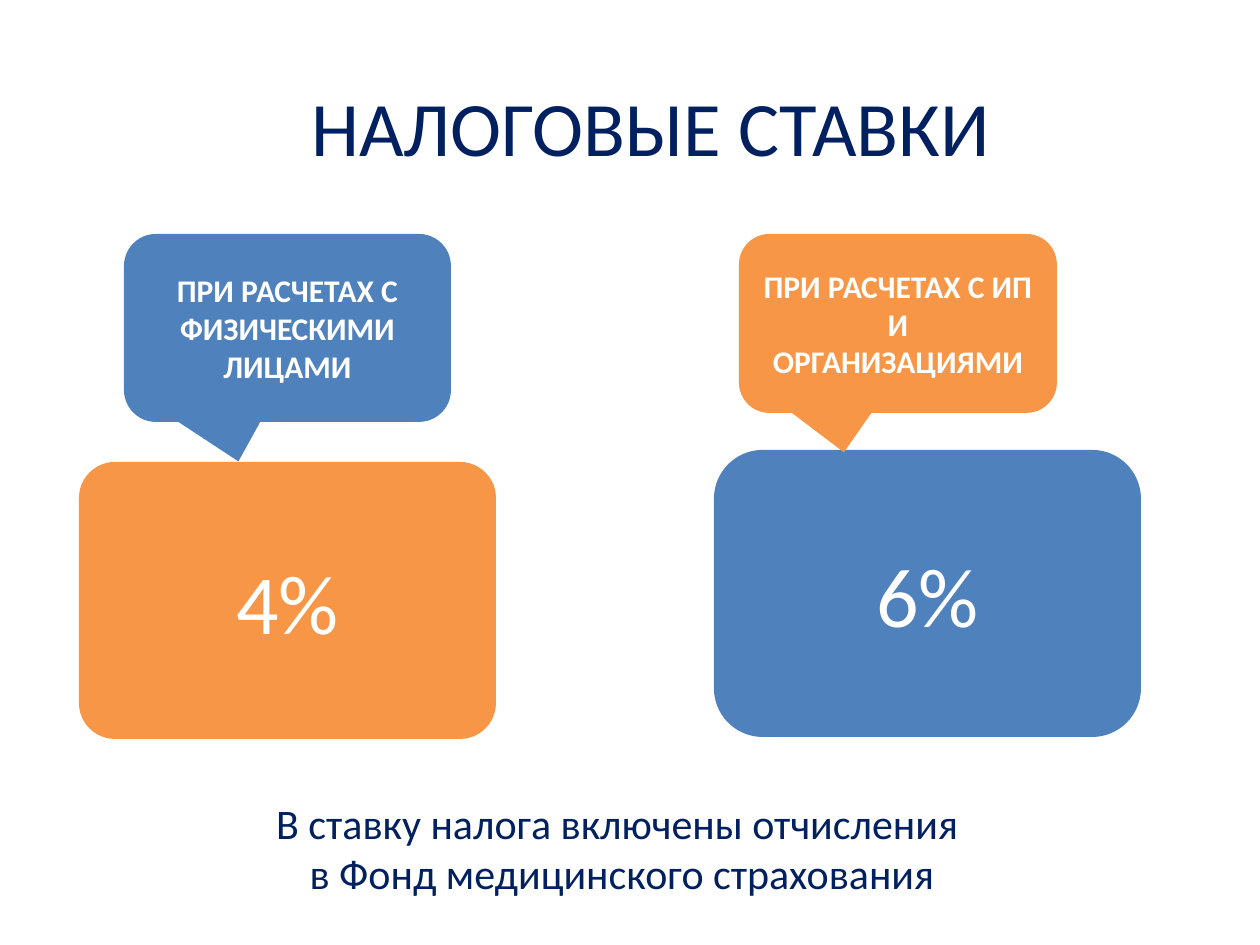
import pptx
import pptx.util
import pptx.dml.color
import pptx.enum.shapes
import pptx.enum.text

PX = 914400 / 126
NAVY, BLUE, ORANGE, WHITE = "002060", "4F81BD", "F79646", "FFFFFF"
SHAPES = pptx.enum.shapes.MSO_SHAPE
MIDDLE = pptx.enum.text.MSO_ANCHOR.MIDDLE
TOP = pptx.enum.text.MSO_ANCHOR.TOP


def emu(*lengths):
    return [pptx.util.Emu(round(length * PX)) for length in lengths]


def color(hex_code):
    return pptx.dml.color.RGBColor.from_string(hex_code)


def write(frame, lines, size, ink, bold=False, anchor=MIDDLE):
    frame.word_wrap = True
    frame.vertical_anchor = anchor
    font_format = {"name": "Calibri", "size": pptx.util.Pt(size), "bold": bold}
    for index, line in enumerate(lines):
        paragraph = frame.add_paragraph() if index else frame.paragraphs[0]
        paragraph.alignment = pptx.enum.text.PP_ALIGN.CENTER
        run = paragraph.add_run()
        run.text = line
        for name, value in font_format.items():
            setattr(run.font, name, value)
        run.font.color.rgb = color(ink)


def add_words(slide, box, lines, size, anchor):
    words = slide.shapes.add_textbox(*emu(*box))
    write(words.text_frame, lines, size, NAVY, anchor=anchor)


def add_panel(slide, kind, box, adjustments, fill, text, size, bold=False):
    panel = slide.shapes.add_shape(kind, *emu(*box))
    for index, value in enumerate(adjustments):
        panel.adjustments[index] = value
    panel.shadow.inherit = False
    panel.fill.solid()
    panel.fill.fore_color.rgb = color(fill)
    panel.line.fill.background()
    write(panel.text_frame, [text], size, WHITE, bold)


def add_tax_rate(slide, box, rate, rate_height, corner, rate_fill,
                 payer, payer_box, tip, payer_fill):
    left, top, width, height = box
    # Rate fills the bottom of the box
    rate_box = (left, top + height - rate_height, width, rate_height)
    add_panel(slide, SHAPES.ROUNDED_RECTANGLE, rate_box, [corner],
              rate_fill, rate, 48)
    # Payer callout hangs from the top and points at the rate
    inset, payer_width, payer_height = payer_box
    add_panel(slide, SHAPES.ROUNDED_RECTANGULAR_CALLOUT,
              (left + inset, top, payer_width, payer_height),
              [*tip, 0.17], payer_fill, payer, 18, True)


def main():
    deck = pptx.Presentation()
    deck.slide_width, deck.slide_height = emu(1260, 945)
    slide = deck.slides.add_slide(deck.slide_layouts[6])

    # Title
    add_words(slide, (84, 47, 1134, 158), ["НАЛОГОВЫЕ СТАВКИ"], 44, MIDDLE)

    # Individuals
    add_tax_rate(slide, (79, 234, 417, 505), "4%", 277, 0.13, ORANGE,
                 "ПРИ РАСЧЕТАХ С ФИЗИЧЕСКИМИ ЛИЦАМИ", (45, 327, 188),
                 (-0.15, 0.71), BLUE)

    # Entrepreneurs and organisations
    add_tax_rate(slide, (714, 234, 427, 503), "6%", 287, 0.17, BLUE,
                 "ПРИ РАСЧЕТАХ С ИП И ОРГАНИЗАЦИЯМИ", (25, 318, 179),
                 (-0.17, 0.72), ORANGE)

    # Note
    add_words(slide, (161, 791, 922, 115),
              ["В ставку налога включены отчисления ",
               "в Фонд медицинского страхования"], 24, TOP)

    deck.save("out.pptx")


if __name__ == "__main__":
    main()
